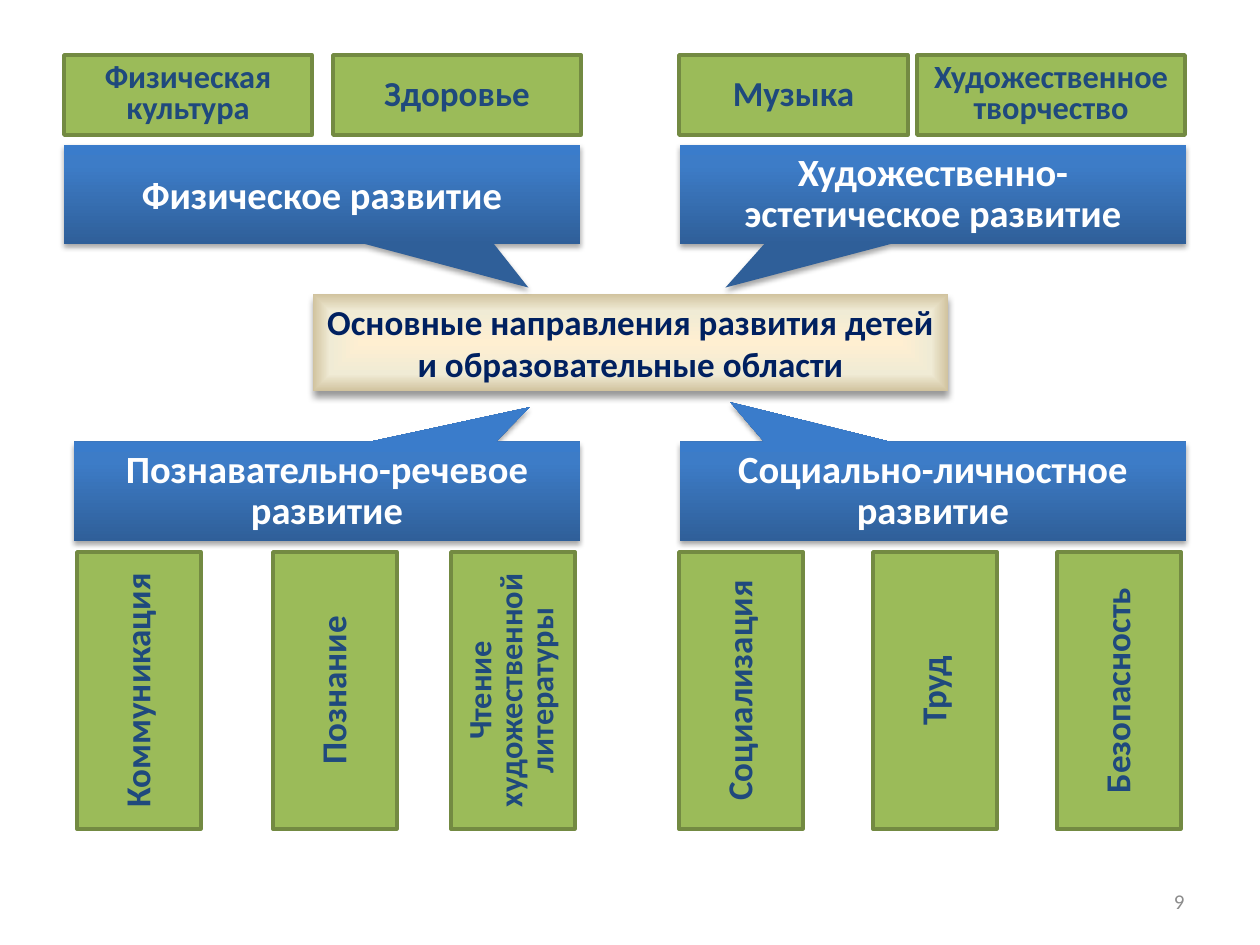
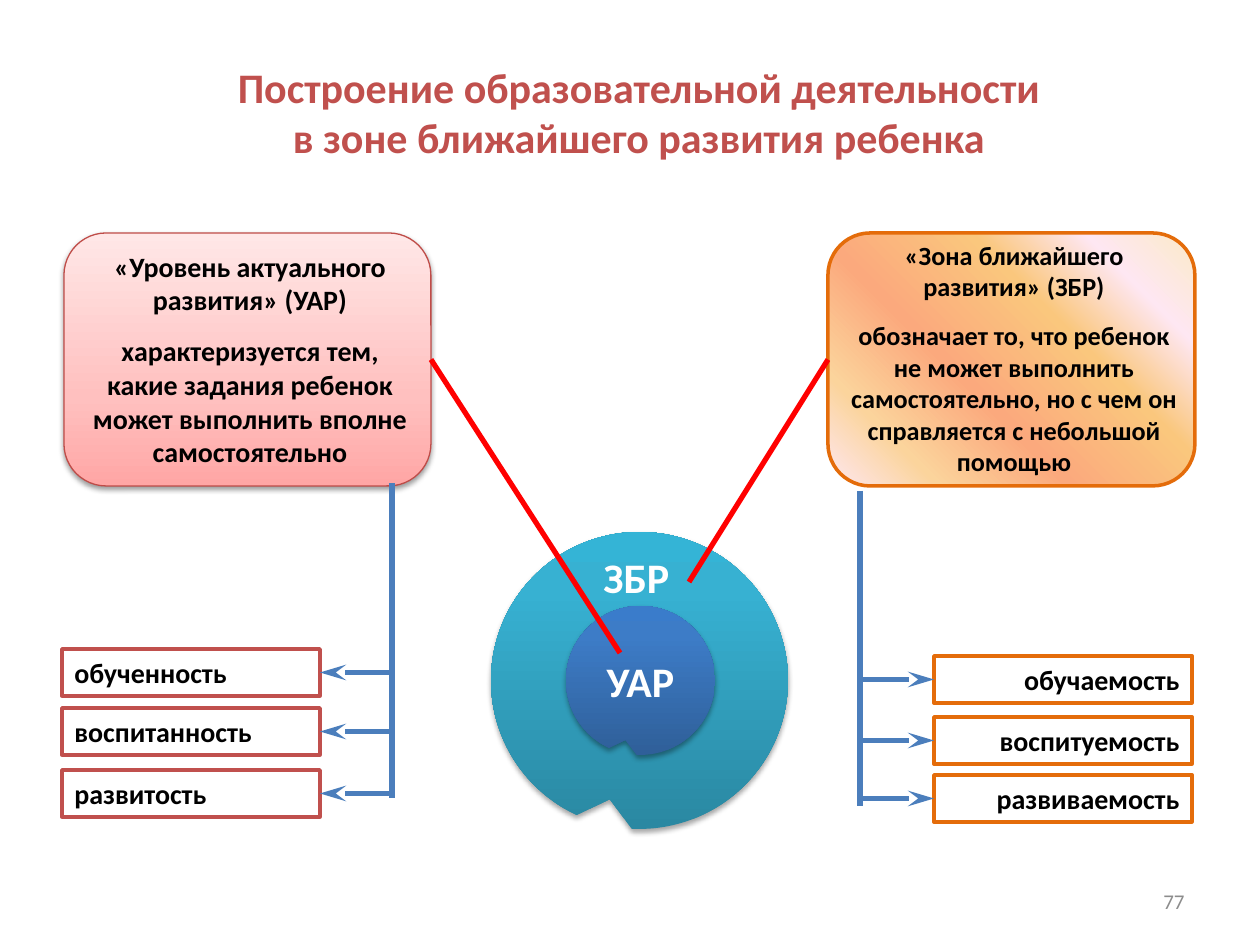
"""Build two slides on the areas of child development and the zone of proximal development."""
from lxml import etree
from pptx import Presentation
from pptx.dml.color import RGBColor
from pptx.enum.shapes import MSO_CONNECTOR, MSO_SHAPE
from pptx.enum.text import MSO_ANCHOR, MSO_AUTO_SIZE, PP_ALIGN
from pptx.oxml.ns import qn
from pptx.util import Pt

RECTANGLE, ROUNDED = MSO_SHAPE.RECTANGLE, MSO_SHAPE.ROUNDED_RECTANGLE
CALLOUT, BALLOON = MSO_SHAPE.RECTANGULAR_CALLOUT, MSO_SHAPE.OVAL_CALLOUT
STRAIGHT = MSO_CONNECTOR.STRAIGHT
LEFT, CENTER, RIGHT = PP_ALIGN.LEFT, PP_ALIGN.CENTER, PP_ALIGN.RIGHT
TOP, MIDDLE = MSO_ANCHOR.TOP, MSO_ANCHOR.MIDDLE
LEFT_SIDE, RIGHT_SIDE = 1, 3

EMU_PER_PX = 914400 / 126
FONT = "Calibri"
TITLE_ONLY, BLANK = 5, 6

COLORS = {
    "white": "FFFFFF", "black": "000000", "navy": "002060", "label": "1F497D",
    "green": "9BBB59", "olive": "738A42", "gray": "8C8C8C", "crimson": "C0504D",
    "rose": "BF4C48", "orange": "E46C0A", "steel": "4B7EBC", "red": "FF0000",
}
GRADIENTS = {
    "blue": ([(0, "2F5F99"), (80, "3D7CC7"), (100, "3A7CCB")], 270),
    "teal": ([(0, "2A88A2"), (80, "37B1D2"), (100, "34B4D6")], 270),
    "pink": ([(0, "FFA6A5"), (35, "FFC0BF"), (100, "FFE7E7")], 270),
    "sunset": ([(0, "FBEAC7"), (18, "FEE7F2"), (36, "FAC77D"), (61, "FBA97D"),
                (82, "FBD49C"), (100, "FEE7F2")], 135),
    "parchment": ([(0, "FFEFD1"), (65, "F0EBD5"), (100, "D1C39F")], None),
}
SOFT_SHADOW, CENTER_SHADOW, CARD_SHADOW = (35, 3.1, 1.8), (40, 4, 3), (38, 3.1, 1.6)
TEXT_SHADOW = (45, 3, 2)

CENTER_TEXT = "Основные направления развития детей и образовательные области"
DIRECTIONS = [
    ("Физическое развитие", (64, 145, 516, 99), (0.4, 0.94), 1),
    ("Художественно-эстетическое развитие", (680, 145, 506, 99), (-0.41, 0.94), 0.9),
    ("Познавательно-речевое развитие", (74, 442, 506, 99), (0.4, -0.85), 0.9),
    ("Социально-личностное развитие", (680, 442, 506, 99), (-0.4, -0.9), 0.9),
]
AREAS_ABOVE = [("Физическая культура", 64, 248), ("Здоровье", 333, 248),
               ("Музыка", 679, 229), ("Художественное творчество", 917, 268)]
AREAS_BELOW = [("Коммуникация", 77), ("Познание", 273),
               ("Чтение художественной литературы", 451),
               ("Социализация", 679), ("Труд", 873), ("Безопасность", 1057)]

TITLE = ["Построение образовательной деятельности", "в зоне ближайшего развития ребенка"]
CARDS = [
    {"box": (64, 233, 367, 253), "fill": "pink", "line": ("rose", 0.75),
     "shadow": CARD_SHADOW, "text_box": (71, 243, 358, 234), "size": 16,
     "text": ["«Уровень актуального развития» (УАР)",
              "характеризуется тем, какие задания ребенок может выполнить вполне "
              "самостоятельно"],
     "side": RIGHT_SIDE, "pointer": (620, 653),
     "trunk": (392, 483, 798), "results_left": 62, "results_line": "crimson", "align": LEFT,
     "results": [("обученность", 649), ("воспитанность", 708), ("развитость", 770)]},
    {"box": (828, 233, 367, 253), "fill": "sunset", "line": ("orange", 2),
     "shadow": None, "text_box": (835, 233, 358, 253), "size": 15,
     "text": ["«Зона ближайшего развития» (ЗБР)",
              "обозначает то, что ребенок не может выполнить самостоятельно, но с чем он "
              "справляется с небольшой помощью"],
     "side": LEFT_SIDE, "pointer": (689, 582),
     "trunk": (860, 491, 806), "results_left": 934, "results_line": "orange", "align": RIGHT,
     "results": [("обучаемость", 656), ("воспитуемость", 717), ("развиваемость", 775)]},
]
RESULT_WIDTH, RESULT_HEIGHT = 258, 47


def emu(*lengths):
    """Turn px lengths into EMU."""
    return [round(length * EMU_PER_PX) for length in lengths]


def rgb(name):
    """Return a named colour."""
    return RGBColor.from_string(COLORS[name])


def add_element(parent, tag, **attributes):
    """Append a drawing element with the given attributes."""
    return etree.SubElement(parent, qn(tag), {key: str(value) for key, value in attributes.items()})


def add_color(parent, color, alpha=None):
    """Append a colour, with its opacity in percent when given."""
    element = add_element(parent, "a:srgbClr", val=color)
    if alpha is not None:
        add_element(element, "a:alpha", val=alpha * 1000)


def add_shadow(effects, shadow):
    """Append a downward outer shadow."""
    alpha, blur, distance = shadow
    outer = add_element(effects, "a:outerShdw", blurRad=Pt(blur), dist=Pt(distance),
                        dir=5400000, rotWithShape=0)
    add_color(outer, COLORS["black"], alpha)


def fill_gradient(shape, name):
    """Fill a shape with a linear gradient, or from its centre when there is no angle."""
    stops, angle = GRADIENTS[name]
    gradient = etree.Element(qn("a:gradFill"), rotWithShape="1")
    stop_list = add_element(gradient, "a:gsLst")
    for position, color in stops:
        add_color(add_element(stop_list, "a:gs", pos=position * 1000), color)
    if angle is None:
        path = add_element(gradient, "a:path", path="shape")
        add_element(path, "a:fillToRect", l=50000, t=50000, r=50000, b=50000)
    else:
        add_element(gradient, "a:lin", ang=angle * 60000, scaled=0)
    shape.fill.background()
    properties = shape._element.spPr
    properties.replace(properties.find(qn("a:noFill")), gradient)


def write_text(shape, lines, size, color, bold=True, align=CENTER, anchor=MIDDLE,
               spacing=None, after=None, shadow=None):
    """Write the paragraphs of a shape in one style."""
    frame = shape.text_frame
    frame.word_wrap = True
    frame.auto_size = MSO_AUTO_SIZE.NONE
    frame.vertical_anchor = anchor
    frame.text = "\n".join(lines)
    for paragraph in frame.paragraphs:
        paragraph.alignment = align
        if spacing:
            paragraph.line_spacing = spacing
        if after:
            paragraph.space_after = Pt(after)
        font = paragraph.font
        font.name, font.size, font.bold = FONT, Pt(size), bold
        font.color.rgb = rgb(color)
        if shadow:
            effects = etree.Element(qn("a:effectLst"))
            add_shadow(effects, shadow)
            paragraph._p.pPr.find(qn("a:defRPr")).find(qn("a:latin")).addprevious(effects)


def add_box(slide, kind, box, fill, line=None, shadow=None, tip=()):
    """Add a preset shape with its fill, line, shadow and callout tip."""
    shape = slide.shapes.add_shape(kind, *emu(*box))
    for index, value in enumerate(tip):
        shape.adjustments[index] = value
    if fill in GRADIENTS:
        fill_gradient(shape, fill)
    else:
        shape.fill.solid()
        shape.fill.fore_color.rgb = rgb(fill)
    if line:
        shape.line.color.rgb, shape.line.width = rgb(line[0]), Pt(line[1])
    else:
        shape.line.fill.background()
    shape.shadow.inherit = False
    if shadow:
        add_shadow(shape._element.spPr.find(qn("a:effectLst")), shadow)
    return shape


def add_text(slide, box, lines, size, color, **style):
    """Add a text box."""
    write_text(slide.shapes.add_textbox(*emu(*box)), lines, size, color, **style)


def add_line(slide, start, end, color, arrow=False):
    """Add a straight line, with an arrowhead at its end when asked."""
    connector = slide.shapes.add_connector(STRAIGHT, *emu(*start, *end))
    connector.line.color.rgb, connector.line.width = rgb(color), Pt(3)
    properties = connector._element.spPr
    if arrow:
        add_element(properties.find(qn("a:ln")), "a:tailEnd", type="stealth", w="med", len="lg")
    add_element(properties, "a:effectLst")
    return connector


def add_page_number(slide, number):
    """Add the page number at the bottom right."""
    add_text(slide, (903, 876, 294, 50), [str(number)], 12, "gray", bold=False, align=RIGHT)


def add_area(slide, label, box, upright=False):
    """Add a green box that names an educational area."""
    area = add_box(slide, RECTANGLE, box, "green", ("olive", 2))
    size, spacing = (18.5, 0.8) if " " in label else (20, 0.9)
    write_text(area, [label], size, "label", spacing=spacing)
    if upright:
        area.text_frame._txBody.bodyPr.set("vert", "vert270")


def build_directions(presentation):
    """Build the slide of development directions and educational areas."""
    slide = presentation.slides.add_slide(presentation.slide_layouts[BLANK])
    center = add_box(slide, RECTANGLE, (313, 294, 635, 97), "parchment", shadow=CENTER_SHADOW)
    write_text(center, [CENTER_TEXT], 20, "navy")
    for label, box, tip, spacing in DIRECTIONS:
        callout = add_box(slide, CALLOUT, box, "blue", shadow=SOFT_SHADOW, tip=tip)
        write_text(callout, [label], 22, "white", spacing=spacing)
    for label, left, width in AREAS_ABOVE:
        add_area(slide, label, (left, 55, width, 80))
    for label, left in AREAS_BELOW:
        add_area(slide, label, (left, 552, 124, 277), upright=True)
    add_page_number(slide, 9)


def add_results(slide, card):
    """Add the results of a card, joined to its trunk line by arrows."""
    trunk, top, bottom = card["trunk"]
    add_line(slide, (trunk, top), (trunk, bottom), "steel")
    left = card["results_left"]
    on_left = left < trunk
    edge, side = (left + RESULT_WIDTH, RIGHT_SIDE) if on_left else (left, LEFT_SIDE)
    for label, result_top in card["results"]:
        result = add_box(slide, RECTANGLE, (left, result_top, RESULT_WIDTH, RESULT_HEIGHT),
                         "white", (card["results_line"], 2))
        write_text(result, [label], 16, "black", align=card["align"], anchor=TOP)
        middle = result_top + RESULT_HEIGHT / 2
        arrow = add_line(slide, (trunk, middle), (edge, middle), "steel", arrow=True)
        arrow.end_connect(result, side)


def build_zone(presentation):
    """Build the slide of the zone of proximal development."""
    slide = presentation.slides.add_slide(presentation.slide_layouts[TITLE_ONLY])
    title = slide.shapes.title
    title.left, title.top, title.width, title.height = emu(113, 55, 1052, 115)
    write_text(title, TITLE, 24, "crimson", anchor=TOP)
    add_box(slide, BALLOON, (491, 532, 297, 297), "teal", shadow=SOFT_SHADOW, tip=(-0.1, 0.4))
    core = add_box(slide, BALLOON, (566, 606, 149, 149), "blue", shadow=SOFT_SHADOW,
                   tip=(-0.1, 0.4))
    write_text(core, ["УАР"], 24, "white")
    add_text(slide, (591, 545, 100, 63), ["ЗБР"], 24, "white", align=LEFT, anchor=TOP)
    for card in CARDS:
        panel = add_box(slide, ROUNDED, card["box"], card["fill"], card["line"], card["shadow"])
        add_text(slide, card["text_box"], card["text"], card["size"], "black",
                 anchor=TOP, after=10, shadow=TEXT_SHADOW)
        add_results(slide, card)
        pointer = add_line(slide, card["box"][:2], card["pointer"], "red")
        pointer.begin_connect(panel, card["side"])
    add_page_number(slide, 77)


def main():
    """Build and save the presentation."""
    presentation = Presentation()
    presentation.slide_width, presentation.slide_height = emu(1260, 945)
    build_directions(presentation)
    build_zone(presentation)
    presentation.save("out.pptx")


if __name__ == "__main__":
    main()
